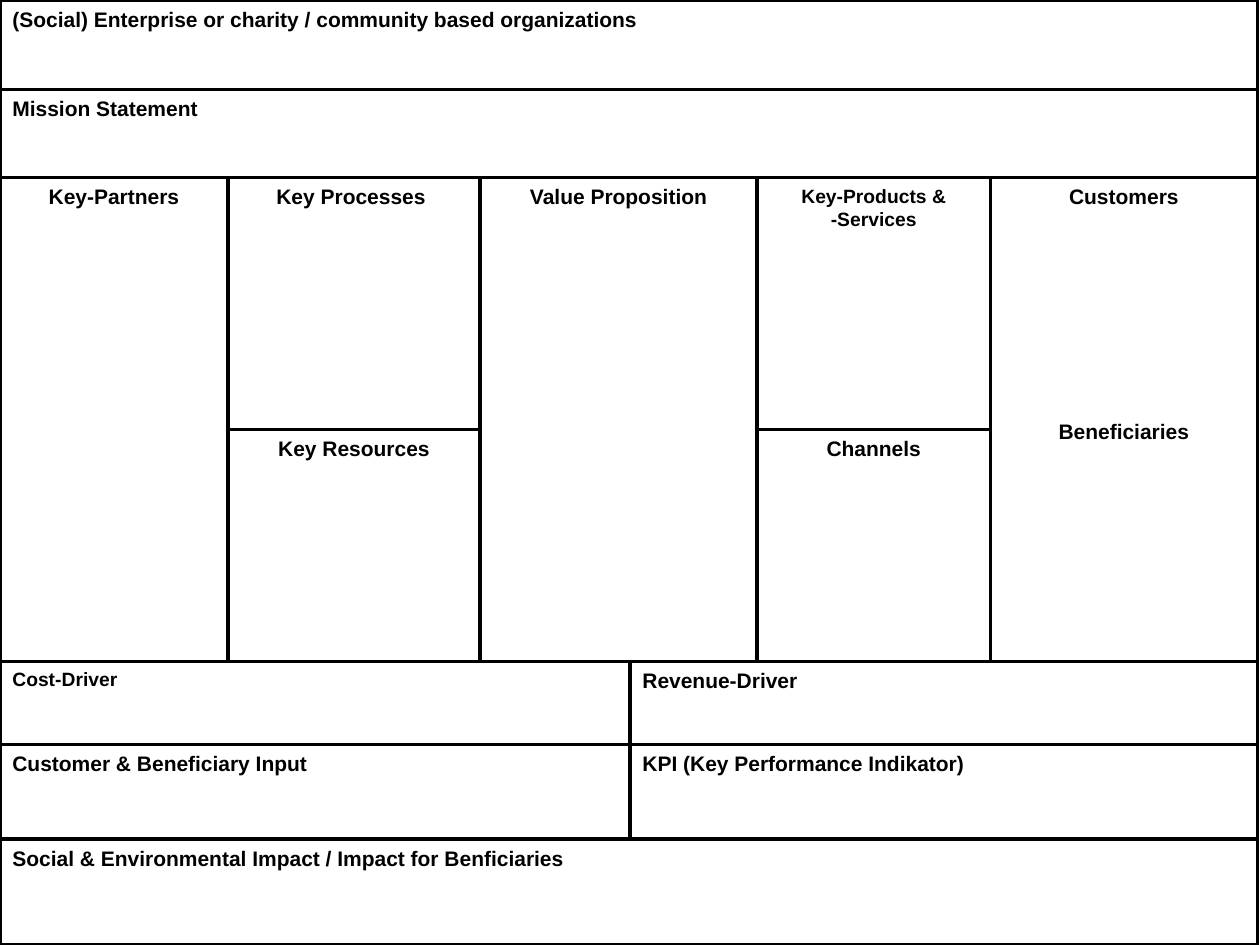
from dataclasses import dataclass

from pptx import Presentation
from pptx.dml.color import RGBColor
from pptx.enum.shapes import MSO_SHAPE
from pptx.enum.text import MSO_ANCHOR, PP_ALIGN
from pptx.util import Inches, Pt

RECT = MSO_SHAPE.RECTANGLE
TOP = MSO_ANCHOR.TOP
LEFT, CENTER = PP_ALIGN.LEFT, PP_ALIGN.CENTER


@dataclass(frozen=True)
class Theme:
    ink: RGBColor = RGBColor(0, 0, 0)
    paper: RGBColor = RGBColor(255, 255, 255)
    font: str = "Arial"
    normal: Pt = Pt(12)
    small: Pt = Pt(11)
    border: Pt = Pt(2)


THEME = Theme()

# Edges of the canvas grid, in inches
ROWS = (0, 0.71, 1.41, 3.41, 5.25, 5.91, 6.66, 7.5)
COLS = (0, 1.81, 3.81, 6.01, 7.86, 9.98)
HALVES = (0, 5, 9.98)


@dataclass(frozen=True)
class Field:
    """A box from one grid edge to another, with its headings."""
    headings: tuple[str, ...]
    x: tuple[float, float]
    rows: tuple[int, int]
    align: PP_ALIGN = CENTER
    size: Pt = THEME.normal
    gap: Pt = Pt(0)


def banner(heading: str, row: int) -> Field:
    return Field((heading,), (COLS[0], COLS[-1]), (row, row + 1), LEFT)


def half(heading: str, side: int, row: int, size: Pt = THEME.normal) -> Field:
    return Field((heading,), HALVES[side:side + 2], (row, row + 1), LEFT, size)


def block(col: int, rows: tuple[int, int], *headings: str,
          size: Pt = THEME.normal, gap: Pt = Pt(0)) -> Field:
    return Field(headings, COLS[col:col + 2], rows, CENTER, size, gap)


UPPER, LOWER, FULL = (2, 3), (3, 4), (2, 4)

FIELDS = (
    banner("Mission Statement", 1),
    block(0, FULL, "Key-Partners"),
    block(1, UPPER, "Key Processes "),
    half("Cost-Driver", 0, 4, THEME.small),
    block(1, LOWER, "Key Resources"),
    block(2, FULL, "Value Proposition"),
    block(3, UPPER, "Key-Products &", "-Services", size=THEME.small),
    block(3, LOWER, "Channels"),
    block(4, FULL, "Customers", "Beneficiaries", gap=Pt(120)),
    half("Revenue-Driver", 1, 4),
    half("KPI (Key Performance Indikator)", 1, 5),
    half("Customer & Beneficiary Input", 0, 5),
    banner("Social & Environmental Impact / Impact for Benficiaries", 6),
    banner("(Social) Enterprise or charity / community based organizations", 0),
)


def draw_field(slide, field: Field) -> None:
    left, right = field.x
    top, bottom = (ROWS[i] for i in field.rows)
    sp = slide.shapes.add_shape(RECT, Inches(left), Inches(top),
                                Inches(right - left), Inches(bottom - top))
    sp.shadow.inherit = False
    sp.fill.solid()
    sp.fill.fore_color.rgb = THEME.paper
    sp.line.color.rgb = THEME.ink
    sp.line.width = THEME.border
    tf = sp.text_frame
    tf.word_wrap = True
    tf.vertical_anchor = TOP
    font_format = {"name": THEME.font, "size": field.size, "bold": True}
    for i, heading in enumerate(field.headings):
        p = tf.add_paragraph() if i else tf.paragraphs[0]
        p.alignment = field.align
        p.space_before = field.gap if i else Pt(0)
        r = p.add_run()
        r.text = heading
        for name, value in font_format.items():
            setattr(r.font, name, value)
        r.font.color.rgb = THEME.ink


def main() -> None:
    prs = Presentation()
    prs.slide_width, prs.slide_height = Inches(10), Inches(7.5)
    slide = prs.slides.add_slide(prs.slide_layouts[6])
    for field in FIELDS:
        draw_field(slide, field)
    prs.save("out.pptx")


if __name__ == "__main__":
    main()
